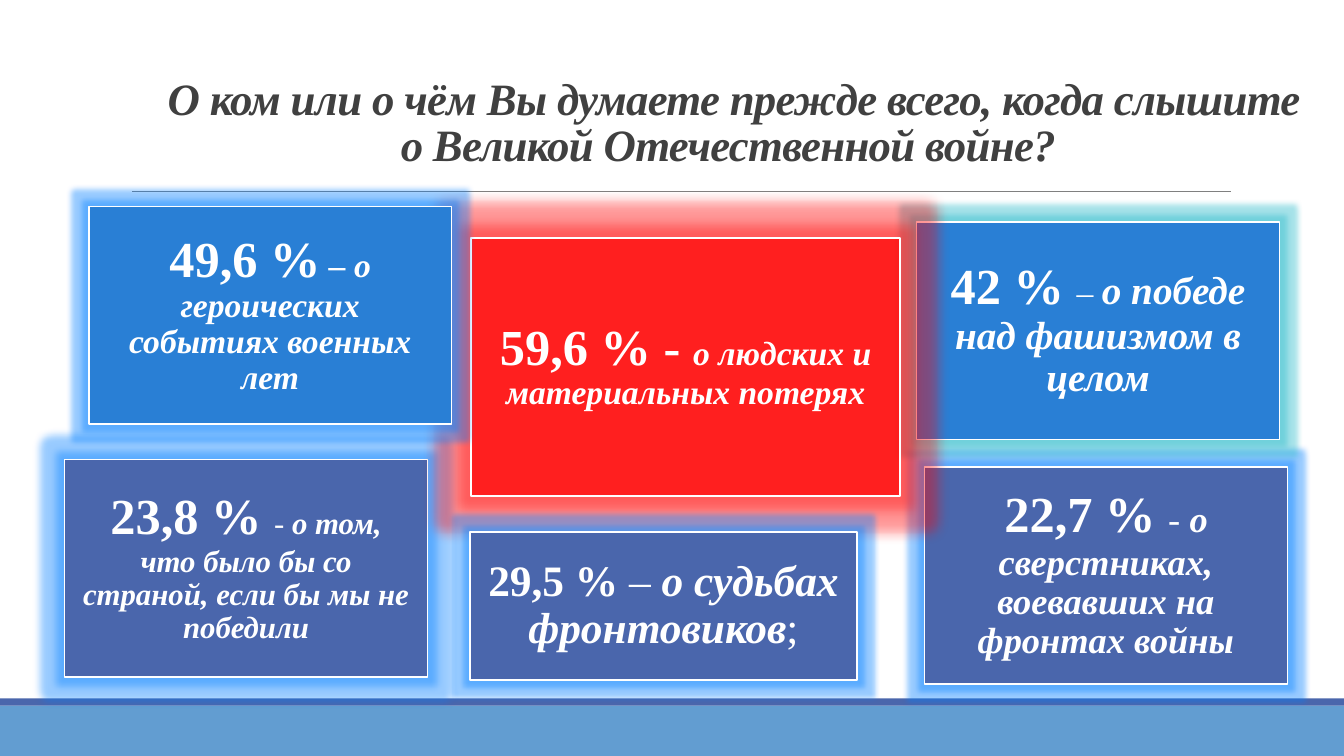
from lxml.etree import SubElement
from pptx import Presentation
from pptx.dml.color import RGBColor
from pptx.enum.shapes import MSO_CONNECTOR, MSO_SHAPE
from pptx.enum.text import MSO_ANCHOR, MSO_AUTO_SIZE, PP_ALIGN
from pptx.oxml.ns import qn
from pptx.util import Inches, Pt

WHITE, NAVY, BLUE, RED = "FFFFFF", "4A66AC", "297FD5", "FF0000"
GLOW_BLUE, GLOW_TEAL = "007FFF", "22B8C8"
BOLD = {"bold": True}
PLAIN = {"bold": False}
ACCENT = {"bold": True, "italic": True}


def color(value):
    return RGBColor.from_string(value)


def set_values(target, values):
    for name, value in values.items():
        setattr(target, name, value)


class SlideBuilder:
    font_name = "Times New Roman"

    def __init__(self, presentation):
        self.slide = presentation.slides.add_slide(presentation.slide_layouts[5])

    def fill_text(self, shape, runs, text_color, line_spacing, frame_format):
        frame = shape.text_frame
        set_values(frame, {"word_wrap": True, "auto_size": MSO_AUTO_SIZE.NONE, **frame_format})
        paragraph = frame.paragraphs[0]
        set_values(paragraph, {"alignment": PP_ALIGN.CENTER, "line_spacing": line_spacing})
        for text, size, style in runs:
            run = paragraph.add_run()
            run.text = text
            set_values(run.font, {"name": self.font_name, "size": Pt(size), **style})
            run.font.color.rgb = color(text_color)
        return paragraph

    def title(self, text, left, top, width, height):
        shape = self.slide.shapes.title
        set_values(shape, {"left": Inches(left), "top": Inches(top),
                           "width": Inches(width), "height": Inches(height)})
        paragraph = self.fill_text(shape, [(text, 32, ACCENT)], "404040", 0.85,
                                   {"vertical_anchor": MSO_ANCHOR.BOTTOM})
        paragraph.runs[0]._r.get_or_add_rPr().set("spc", "-50")

    def rectangle(self, left, top, width, height, fill):
        shape = self.slide.shapes.add_shape(
            MSO_SHAPE.RECTANGLE, Inches(left), Inches(top), Inches(width), Inches(height))
        shape.shadow.inherit = False
        shape.fill.solid()
        shape.fill.fore_color.rgb = color(fill)
        shape.line.fill.background()
        return shape

    def rule(self, left, right, top):
        line = self.slide.shapes.add_connector(
            MSO_CONNECTOR.STRAIGHT, Inches(left), Inches(top), Inches(right), Inches(top))
        line.line.color.rgb = color("808080")
        line.line.width = Pt(0.5)
        SubElement(line._element.spPr, qn("a:effectLst"))

    def set_alpha(self, color_element, percent):
        SubElement(color_element, qn("a:alpha")).set("val", str(percent * 1000))

    def card(self, box, fill, glow, radius, runs, inset=0.15, opacity=100):
        shape = self.rectangle(*box, fill)
        shape.line.color.rgb = color(WHITE)
        shape.line.width = Pt(1.25)
        properties = shape._element.spPr
        if opacity < 100:
            self.set_alpha(properties.find(qn("a:solidFill"))[0], opacity)
        halo = SubElement(properties.find(qn("a:effectLst")), qn("a:glow"))
        halo.set("rad", str(Pt(radius)))
        halo_color = SubElement(halo, qn("a:srgbClr"))
        halo_color.set("val", glow)
        self.set_alpha(halo_color, 40)
        margins = {f"margin_{side}": Inches(inset) for side in ("left", "right", "top", "bottom")}
        self.fill_text(shape, runs, WHITE, 0.9, {"vertical_anchor": MSO_ANCHOR.MIDDLE, **margins})


def main():
    presentation = Presentation()
    presentation.slide_width = Inches(13.33)
    presentation.slide_height = Inches(7.5)
    builder = SlideBuilder(presentation)

    builder.rectangle(0, 7, 13.33, 0.5, "629DD1")
    builder.rectangle(0, 6.93, 13.33, 0.07, NAVY)
    builder.rule(1.31, 12.21, 1.9)
    builder.title("О ком или о чём Вы думаете прежде всего, когда слышите "
                  "о Великой Отечественной войне? ", 1.56, 0.21, 11.43, 1.53)

    width, height = 3.6, 2.16
    builder.card((0.64, 4.56, width, height), NAVY, GLOW_BLUE, 11, [
        ("23,8 % ", 36, BOLD), ("- ", 22, PLAIN),
        ("о том, что было бы со страной, если бы мы не победили", 22, ACCENT)])
    builder.card((9.17, 4.63, width, height), NAVY, GLOW_BLUE, 8, [
        ("22,7 % ", 36, BOLD), ("- ", 26, PLAIN),
        ("о сверстниках, воевавших на фронтах войны", 26, ACCENT)])
    builder.card((9.09, 2.2, width, height), BLUE, GLOW_TEAL, 8, [
        ("42 % ", 36, BOLD), ("– ", 24, PLAIN),
        ("о победе над фашизмом в целом", 28, ACCENT)])
    builder.card((4.67, 2.36, 4.26, 2.56), RED, RED, 18, [
        ("59,6 % - ", 36, BOLD),
        ("о людских и материальных потерях", 24, ACCENT)], opacity=66)
    builder.card((4.66, 5.28, 3.84, 1.47), NAVY, GLOW_BLUE, 8, [
        ("29,5 %", 31, BOLD), (" – ", 31, PLAIN),
        ("о судьбах фронтовиков", 31, ACCENT), (";", 31, PLAIN)], inset=0.13)
    builder.card((0.88, 2.05, width, height), BLUE, GLOW_BLUE, 8, [
        ("49,6 %", 36, BOLD), (" ", 24, PLAIN),
        ("– о героических событиях военных лет", 24, ACCENT)])

    presentation.save("out.pptx")


if __name__ == "__main__":
    main()
